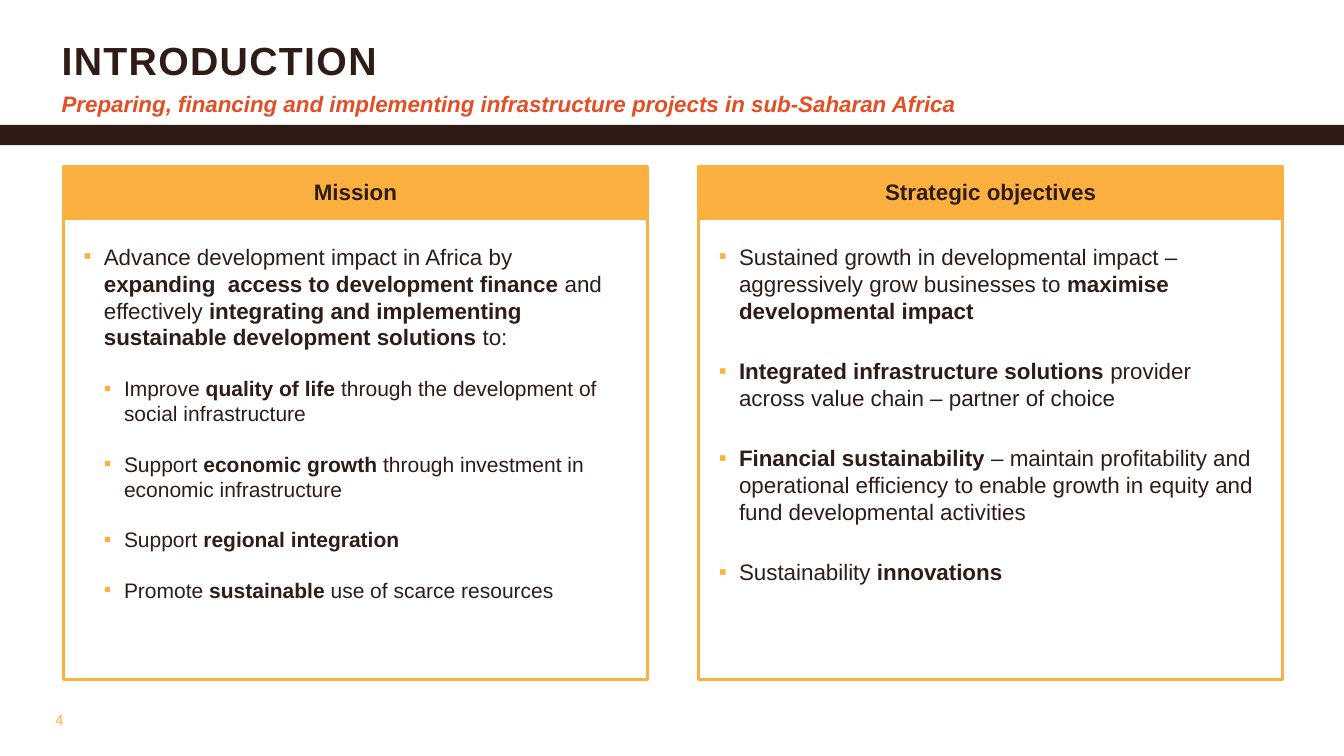
import pptx
import pptx.dml.color
import pptx.enum.shapes
import pptx.enum.text
import pptx.oxml.ns
import pptx.util
import lxml.etree

COLORS = {"brown": "301C16", "amber": "FBB040", "orange": "E24F25"}
FONT = "Arial"
ALIGN = pptx.enum.text.PP_ALIGN
ANCHOR = pptx.enum.text.MSO_ANCHOR

PANEL_LEFT, PANEL_WIDTH, PANEL_PITCH = 4.73, 43.44, 47.26
HEADER_TOP, HEADER_HEIGHT = 22, 6.8
BODY_TOP, BODY_HEIGHT = 28.93, 60.93
TITLE_INSETS = (0.08, 0.04, 0.08, 0.04)
BODY_INSETS = (0.2, 0.24, 0.2, 0.08)
BULLET_INDENT = 0.2

PANELS = [
    ("Mission", 6, [
        (0, "Advance development impact in Africa by **expanding  access to development finance** and "
            "effectively **integrating and implementing sustainable development solutions **to:"),
        (1, "Improve **quality of life **through the development of social infrastructure"),
        (1, "Support **economic growth **through investment in economic infrastructure"),
        (1, "Support **regional integration**"),
        (1, "Promote **sustainable** use of scarce resources"),
    ]),
    ("Strategic objectives", 12, [
        (0, "Sustained growth in developmental impact – aggressively grow businesses to "
            "**maximise developmental impact**"),
        (0, "**Integrated infrastructure solutions** provider across value chain – partner of choice"),
        (0, "**Financial sustainability **– maintain profitability and operational efficiency "
            "to enable growth in equity and fund developmental activities"),
        (0, "Sustainability **innovations**"),
    ]),
]


def rgb(name):
    return pptx.dml.color.RGBColor.from_string(COLORS[name])


def write_text(paragraph, text, size=16, color="brown", bold=False, italic=False,
               align=ALIGN.LEFT, tracking=0, line_spacing=None):
    paragraph.alignment = align
    if line_spacing:
        paragraph.line_spacing = line_spacing
    for index, part in enumerate(text.split("**")):
        if not part:
            continue
        run = paragraph.add_run()
        run.text = part
        run.font.name = FONT
        run.font.size = pptx.util.Pt(size)
        run.font.bold = bold or index % 2 == 1
        run.font.italic = italic
        run.font.color.rgb = rgb(color)
        if tracking:
            run.font._element.set("spc", str(tracking * 100))


def add_bullet(paragraph, level):
    qn = pptx.oxml.ns.qn
    properties = paragraph._p.get_or_add_pPr()
    properties.set("marL", str(pptx.util.Inches(BULLET_INDENT * (level + 1))))
    properties.set("indent", str(pptx.util.Inches(-BULLET_INDENT)))
    bullet_color = lxml.etree.SubElement(properties, qn("a:buClr"))
    lxml.etree.SubElement(bullet_color, qn("a:srgbClr"), val=COLORS["amber"])
    lxml.etree.SubElement(properties, qn("a:buFont"), typeface=FONT)
    lxml.etree.SubElement(properties, qn("a:buChar"), char="▪")


class SlideBuilder:
    def __init__(self, presentation):
        self.width = presentation.slide_width
        self.height = presentation.slide_height
        self.slide = presentation.slides.add_slide(presentation.slide_layouts[6])

    def place(self, left, top, width, height):
        return (round(self.width * left / 100), round(self.height * top / 100),
                round(self.width * width / 100), round(self.height * height / 100))

    def frame(self, shape, anchor, insets):
        frame = shape.text_frame
        frame.word_wrap = True
        frame.vertical_anchor = anchor
        (frame.margin_left, frame.margin_top,
         frame.margin_right, frame.margin_bottom) = map(pptx.util.Inches, insets)
        return frame

    def rectangle(self, area, fill=None, line=None):
        shape = self.slide.shapes.add_shape(
            pptx.enum.shapes.MSO_SHAPE.RECTANGLE, *self.place(*area))
        shape.shadow.inherit = False
        if fill:
            shape.fill.solid()
            shape.fill.fore_color.rgb = rgb(fill)
        else:
            shape.fill.background()
        if line:
            shape.line.color.rgb = rgb(line)
            shape.line.width = pptx.util.Pt(2.25)
        else:
            shape.line.fill.background()
        return shape

    def label(self, area, text, anchor=ANCHOR.BOTTOM, insets=TITLE_INSETS, **text_format):
        box = self.slide.shapes.add_textbox(*self.place(*area))
        write_text(self.frame(box, anchor, insets).paragraphs[0], text, **text_format)

    def panel(self, column, heading, space_after, items):
        left = PANEL_LEFT + column * PANEL_PITCH
        header = self.rectangle((left, HEADER_TOP, PANEL_WIDTH, HEADER_HEIGHT), "amber", "amber")
        header_frame = self.frame(header, ANCHOR.MIDDLE, (0.1, 0.05, 0.1, 0.05))
        write_text(header_frame.paragraphs[0], heading, bold=True, align=ALIGN.CENTER)

        body = self.rectangle((left, BODY_TOP, PANEL_WIDTH, BODY_HEIGHT), line="amber")
        frame = self.frame(body, ANCHOR.TOP, BODY_INSETS)
        for index, (level, text) in enumerate(items):
            paragraph = frame.add_paragraph() if index else frame.paragraphs[0]
            paragraph.level = level
            add_bullet(paragraph, level)
            paragraph.space_before = pptx.util.Pt(12 if index else 0)
            paragraph.space_after = pptx.util.Pt(space_after)
            write_text(paragraph, text, size=16 - level)


def main():
    presentation = pptx.Presentation()
    presentation.slide_width = pptx.util.Inches(13.33)
    presentation.slide_height = pptx.util.Inches(7.5)
    builder = SlideBuilder(presentation)

    builder.rectangle((0, 16.53, 100, 2.67), fill="brown")
    builder.label((3.98, 4.8, 80.72, 6.8), "INTRODUCTION",
                  size=28, bold=True, tracking=1, line_spacing=0.9)
    builder.label((3.98, 12, 91.52, 4),
                  "Preparing, financing and implementing infrastructure projects in sub-Saharan Africa",
                  color="orange", bold=True, italic=True)
    for column, (heading, space_after, items) in enumerate(PANELS):
        builder.panel(column, heading, space_after, items)
    builder.label((0, 92.53, 9.08, 5.33), "4", anchor=ANCHOR.MIDDLE,
                  insets=(0.55, 0.05, 0.28, 0.05), size=10.5, color="amber")

    presentation.save("out.pptx")


if __name__ == "__main__":
    main()
